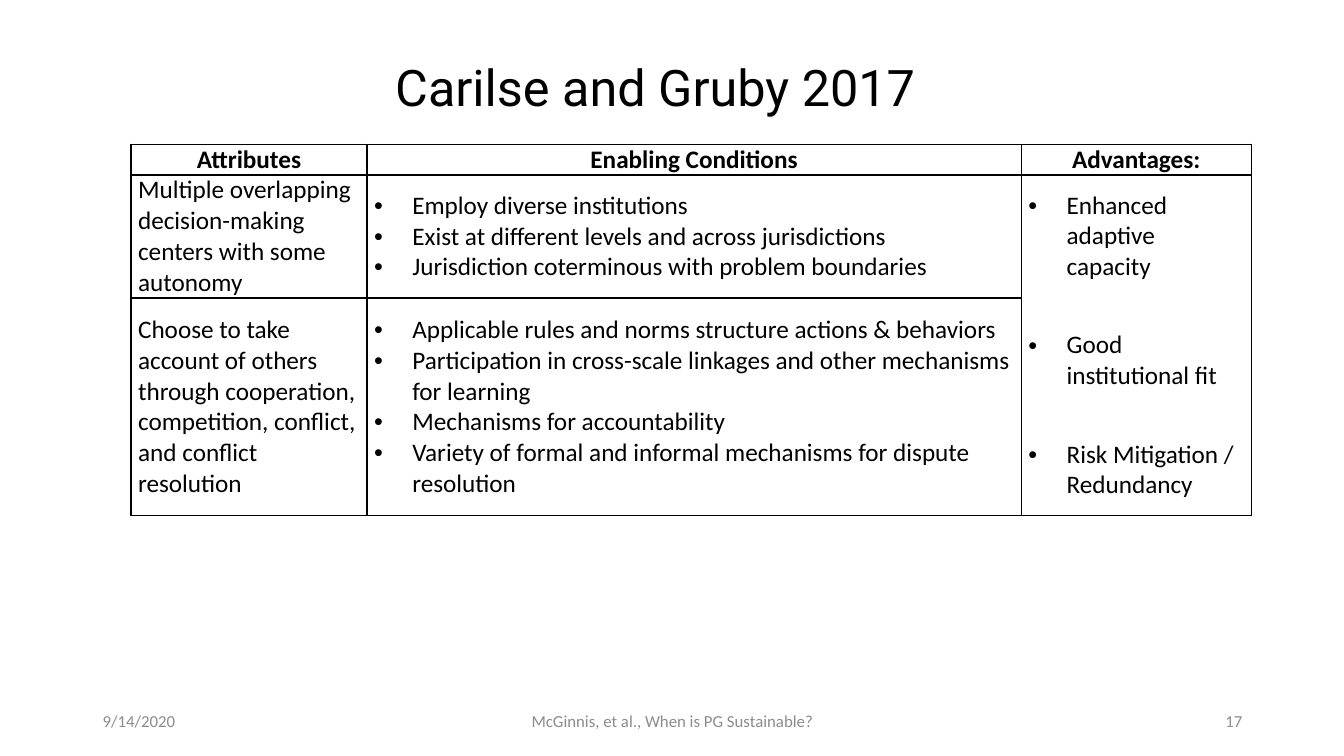
from dataclasses import dataclass
from typing import Any

from lxml.etree import SubElement
from pptx import Presentation
from pptx.dml.color import RGBColor
from pptx.enum.text import MSO_ANCHOR, PP_ALIGN
from pptx.oxml.ns import qn
from pptx.util import Inches, Pt

BLACK, GRAY, WHITE = "000000", "8C8C8C", "FFFFFF"
CELL_FORMAT = {
    "margin_left": Inches(0.07),
    "margin_right": Inches(0.07),
    "margin_top": 0,
    "margin_bottom": 0,
    "vertical_anchor": MSO_ANCHOR.MIDDLE,
}


@dataclass
class CellContent:
    row: int
    column: int
    lines: list[str]
    bulleted: bool = False
    heading: bool = False
    gap: float = 0


@dataclass
class FooterItem:
    text: str
    left: float
    width: float
    alignment: PP_ALIGN


COLUMN_WIDTHS = [2.34, 6.49, 2.28]
ROW_HEIGHTS = [0.29, 1.15, 2.16]
HEADINGS = ["Attributes", "Enabling Conditions", "Advantages:"]
CONTENTS = [
    *(CellContent(0, column, [heading], heading=True) for column, heading in enumerate(HEADINGS)),
    CellContent(1, 0, ["Multiple overlapping decision-making centers with some autonomy"]),
    CellContent(1, 1, [
        "Employ diverse institutions",
        "Exist at different levels and across jurisdictions",
        "Jurisdiction coterminous with problem boundaries",
    ], bulleted=True),
    CellContent(1, 2, [
        "Enhanced adaptive capacity",
        "Good institutional fit",
        "Risk Mitigation / Redundancy",
    ], bulleted=True, gap=34),
    CellContent(2, 0, [
        "Choose to take account of others through cooperation, competition, "
        "conflict, and conflict resolution",
    ]),
    CellContent(2, 1, [
        "Applicable rules and norms structure actions & behaviors",
        "Participation in cross-scale linkages and other mechanisms for learning",
        "Mechanisms for accountability",
        "Variety of formal and informal mechanisms for dispute resolution",
    ], bulleted=True),
]
FOOTER = [
    FooterItem("9/14/2020", 0.92, 3, PP_ALIGN.LEFT),
    FooterItem("McGinnis, et al., When is PG Sustainable?", 4.42, 4.5, PP_ALIGN.CENTER),
    FooterItem("17", 9.42, 3, PP_ALIGN.RIGHT),
]


def apply_format(target: Any, values: dict[str, Any]) -> None:
    for attribute, value in values.items():
        setattr(target, attribute, value)


def set_color(color_format: Any, hex_color: str) -> None:
    color_format.rgb = RGBColor.from_string(hex_color)


def write(paragraph: Any, text: str, size: float, color: str,
          font: str = "Calibri", bold: bool = False) -> None:
    run = paragraph.add_run()
    run.text = text
    apply_format(run.font, {"name": font, "size": Pt(size), "bold": bold})
    set_color(run.font.color, color)


def add_bullet(paragraph: Any) -> None:
    properties = paragraph._p.get_or_add_pPr()
    properties.set("marL", str(Inches(0.38)))
    properties.set("indent", str(-Inches(0.38)))
    SubElement(properties, qn("a:buFont"), typeface="Arial")
    SubElement(properties, qn("a:buChar"), char="•")


def style_cell(cell: Any) -> None:
    apply_format(cell, CELL_FORMAT)
    properties = cell._tc.get_or_add_tcPr()
    for side in ("lnL", "lnR", "lnT", "lnB"):
        border = SubElement(properties, qn(f"a:{side}"), w=str(Pt(1)))
        border_fill = SubElement(border, qn("a:solidFill"))
        SubElement(border_fill, qn("a:srgbClr"), val=BLACK)
    cell.fill.solid()
    set_color(cell.fill.fore_color, WHITE)


def fill_cell(cell: Any, content: CellContent) -> None:
    frame = cell.text_frame
    for index, line in enumerate(content.lines):
        paragraph = frame.add_paragraph() if index else frame.paragraphs[0]
        if content.bulleted:
            add_bullet(paragraph)
        if index and content.gap:
            paragraph.space_before = Pt(content.gap)
        paragraph.alignment = PP_ALIGN.CENTER if content.heading else PP_ALIGN.LEFT
        write(paragraph, line, 18, BLACK, bold=content.heading)


def add_title(slide: Any) -> None:
    title = slide.shapes.title
    apply_format(title, {"left": Inches(0.75), "top": Inches(0.54),
                         "width": Inches(11.5), "height": Inches(0.71)})
    title.text_frame.vertical_anchor = MSO_ANCHOR.MIDDLE
    heading = title.text_frame.paragraphs[0]
    apply_format(heading, {"alignment": PP_ALIGN.CENTER, "line_spacing": 0.9})
    write(heading, "Carilse and Gruby 2017", 36, BLACK, "Roboto")


def add_conditions_table(slide: Any) -> None:
    table = slide.shapes.add_table(
        len(ROW_HEIGHTS), len(COLUMN_WIDTHS), Inches(1.3), Inches(1.43),
        Inches(sum(COLUMN_WIDTHS)), Inches(sum(ROW_HEIGHTS))).table
    apply_format(table, {"first_row": False, "horz_banding": False})
    for column, width in zip(table.columns, COLUMN_WIDTHS):
        column.width = Inches(width)
    for row, height in zip(table.rows, ROW_HEIGHTS):
        row.height = Inches(height)
    for cell in table.iter_cells():
        style_cell(cell)
    table.cell(1, 2).merge(table.cell(2, 2))
    for content in CONTENTS:
        fill_cell(table.cell(content.row, content.column), content)


def add_footer_item(slide: Any, item: FooterItem) -> None:
    frame = slide.shapes.add_textbox(
        Inches(item.left), Inches(6.95), Inches(item.width), Inches(0.4)).text_frame
    apply_format(frame, {"word_wrap": True, "vertical_anchor": MSO_ANCHOR.MIDDLE})
    frame.paragraphs[0].alignment = item.alignment
    write(frame.paragraphs[0], item.text, 12, GRAY)


def main() -> None:
    presentation = Presentation()
    apply_format(presentation, {"slide_width": Inches(13.33), "slide_height": Inches(7.5)})
    slide = presentation.slides.add_slide(presentation.slide_layouts[5])
    add_title(slide)
    add_conditions_table(slide)
    for item in FOOTER:
        add_footer_item(slide, item)
    presentation.save("out.pptx")


if __name__ == "__main__":
    main()
